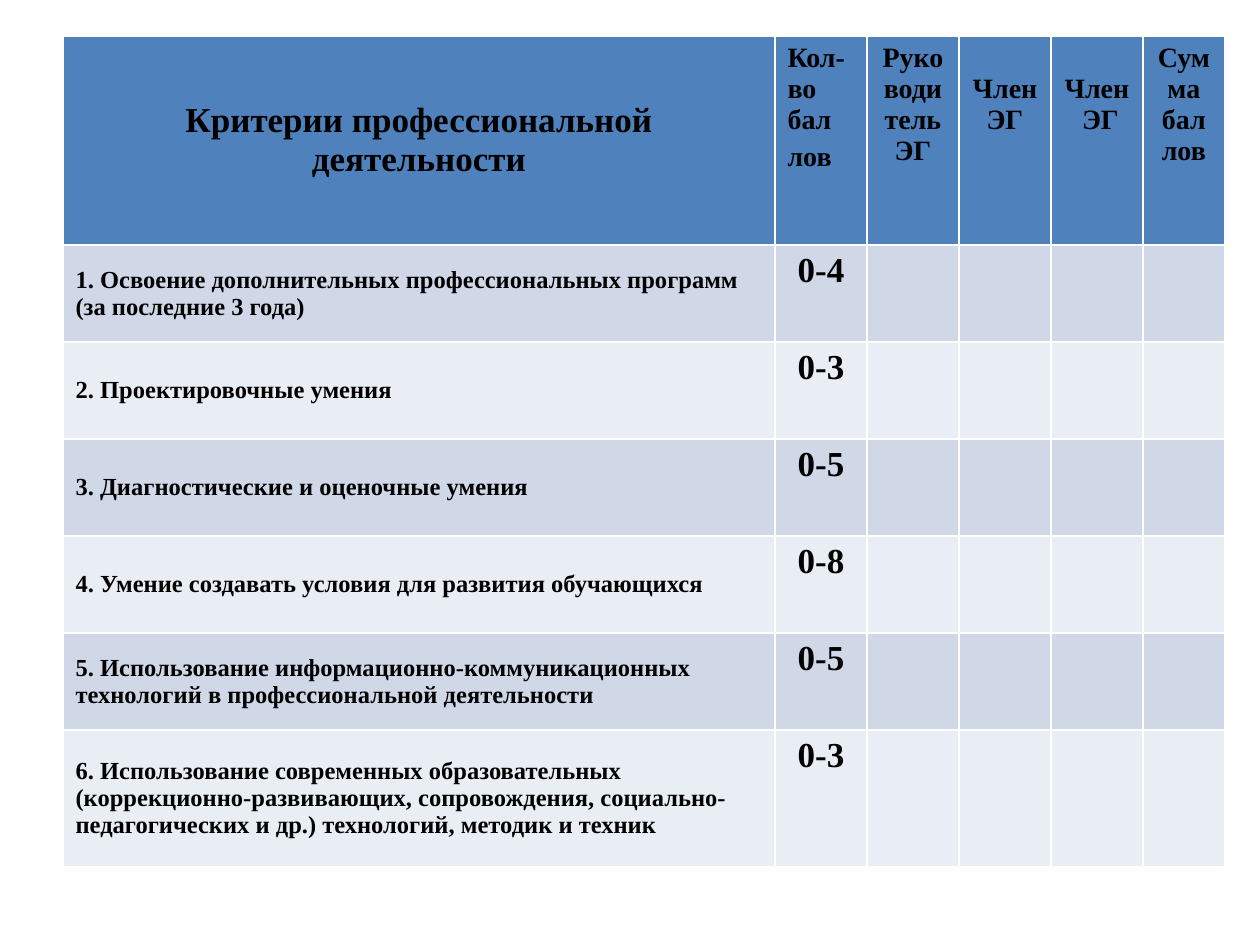
"""Build a slide with a scoring table of professional activity criteria."""
import pptx
import pptx.dml.color
import pptx.enum.text
import pptx.util

ALIGN = pptx.enum.text.PP_ALIGN
ANCHOR = pptx.enum.text.MSO_ANCHOR

THEME = {
    "font": "Times New Roman",
    "text": "000000",
    "header": "4F81BD",
    "bands": ("D0D8E8", "E9EDF4"),
    "title_size": 20,
    "label_size": 16,
    "criterion_size": 14,
    "score_size": 20,
    "paragraph_gap": 3.2,
}

HEADINGS = [
    "Критерии профессиональной деятельности",
    "Кол-во бал\nлов",
    "Руко\nводи\nтель ЭГ",
    " Член ЭГ",
    " Член  ЭГ",
    "Сум\nма бал\nлов",
]
CRITERIA = [
    ("1. Освоение дополнительных профессиональных программ (за последние 3 года)", "0-4"),
    ("2. Проектировочные умения", "0-3"),
    ("3. Диагностические и оценочные умения", "0-5"),
    ("4. Умение создавать условия для развития обучающихся", "0-8"),
    ("5. Использование информационно-коммуникационных технологий "
     "в профессиональной деятельности", "0-5"),
    ("6. Использование современных образовательных (коррекционно-развивающих, "
     "сопровождения, социально-педагогических и др.) технологий, методик и техник", "0-3"),
]

SLIDE_SIZE = (1260, 945)
TABLE_ORIGIN = (63, 36)
COLUMN_WIDTHS = [712] + [92] * 4 + [82]
ROW_HEIGHTS = [209] + [97] * 5 + [137]


def px(length):
    return pptx.util.Emu(round(length * 914400 / 126))


def rgb(value):
    return pptx.dml.color.RGBColor.from_string(value)


def paint(cell, colour):
    cell.fill.solid()
    cell.fill.fore_color.rgb = rgb(colour)


def write(cell, text, size, align=ALIGN.CENTER, anchor=ANCHOR.TOP, gap=0):
    cell.text_frame.text = text
    cell.vertical_anchor = anchor
    for paragraph in cell.text_frame.paragraphs:
        paragraph.alignment = align
        paragraph.space_before = pptx.util.Pt(gap)
        for run in paragraph.runs:
            run.font.name = THEME["font"]
            run.font.size = pptx.util.Pt(size)
            run.font.bold = True
            run.font.color.rgb = rgb(THEME["text"])


def fill_header(table):
    for column, heading in enumerate(HEADINGS):
        cell = table.cell(0, column)
        paint(cell, THEME["header"])
        if column == 0:
            write(cell, heading, THEME["title_size"], anchor=ANCHOR.MIDDLE)
        elif column == 1:
            write(cell, heading, THEME["label_size"], ALIGN.LEFT, gap=THEME["paragraph_gap"])
        else:
            write(cell, heading, THEME["label_size"])


def fill_criteria(table):
    for row, (criterion, score) in enumerate(CRITERIA, start=1):
        for column in range(len(HEADINGS)):
            paint(table.cell(row, column), THEME["bands"][(row - 1) % 2])
        write(table.cell(row, 0), criterion, THEME["criterion_size"], ALIGN.LEFT, ANCHOR.MIDDLE)
        write(table.cell(row, 1), score, THEME["score_size"])


def main():
    deck = pptx.Presentation()
    deck.slide_width, deck.slide_height = map(px, SLIDE_SIZE)
    slide = deck.slides.add_slide(deck.slide_layouts[6])
    table = slide.shapes.add_table(
        len(ROW_HEIGHTS), len(COLUMN_WIDTHS), *map(px, TABLE_ORIGIN),
        px(sum(COLUMN_WIDTHS)), px(sum(ROW_HEIGHTS)),
    ).table
    for column, width in zip(table.columns, COLUMN_WIDTHS):
        column.width = px(width)
    for row, height in zip(table.rows, ROW_HEIGHTS):
        row.height = px(height)
    fill_header(table)
    fill_criteria(table)
    deck.save("out.pptx")


if __name__ == "__main__":
    main()
